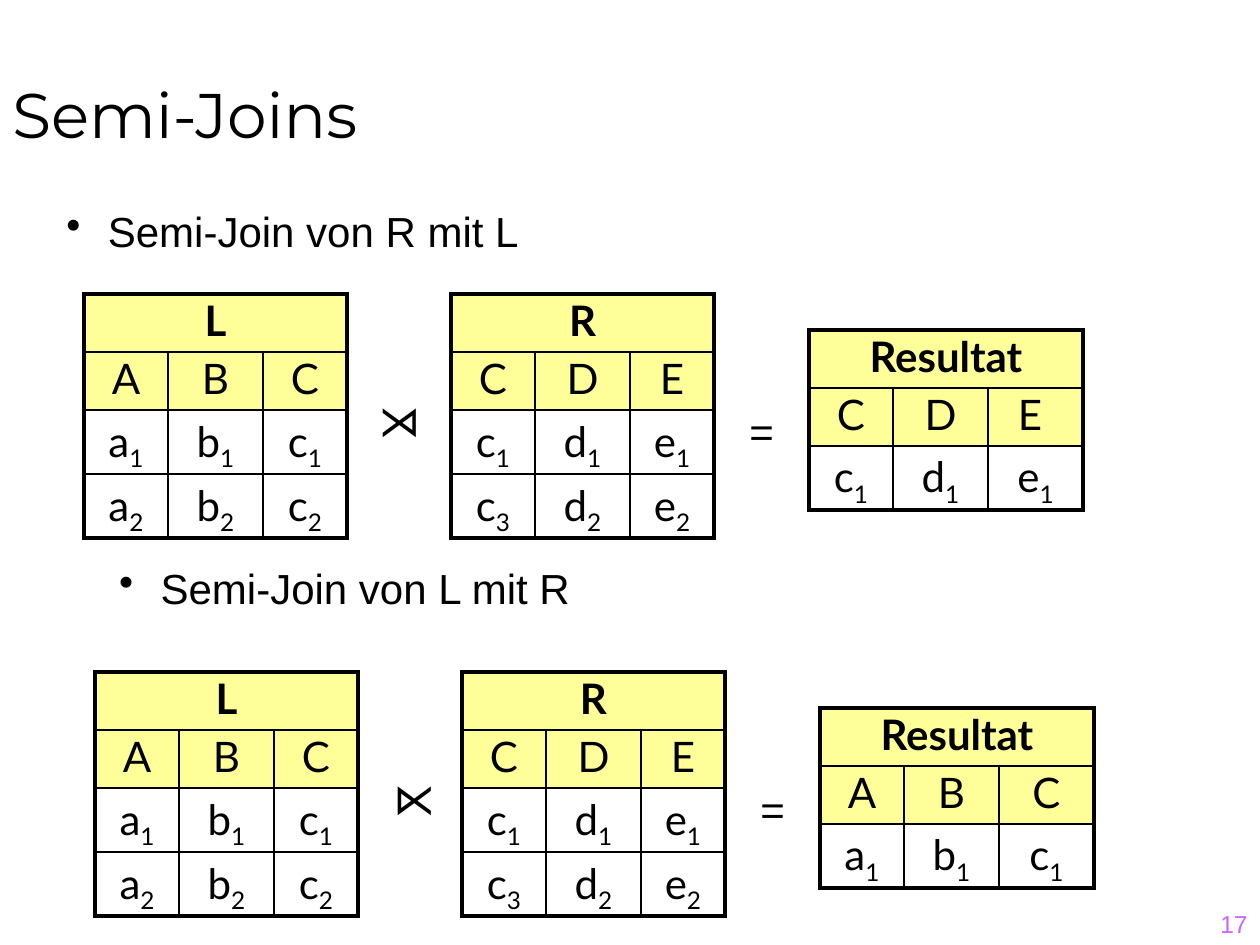
import lxml.etree
import pptx
import pptx.dml.color
import pptx.enum.text
import pptx.oxml
import pptx.oxml.ns
import pptx.util

EMU_PER_PX = 914400 / 126
COLORS = {"ink": "000000", "header": "FFFF99", "body": "FFFFFF", "page": "CC66FF"}
ALIGN = pptx.enum.text.PP_ALIGN
ANCHOR = pptx.enum.text.MSO_ANCHOR
qn = pptx.oxml.ns.qn


def px(length):
    return pptx.util.Emu(round(length * EMU_PER_PX))


def write(frame, text, font="Arial", size=24, color="ink", bold=False,
          align=ALIGN.CENTER, anchor=ANCHOR.TOP, line=None, before=50, bullet=None):
    """Fill a text frame; what follows an underscore is set as a subscript."""
    frame.word_wrap = True
    frame.vertical_anchor = anchor
    paragraph = frame.paragraphs[0]
    paragraph.alignment = align
    if line:
        paragraph.line_spacing = line
    properties = paragraph._p.get_or_add_pPr()
    spacing = lxml.etree.SubElement(properties, qn("a:spcBef"))
    lxml.etree.SubElement(spacing, qn("a:spcPct"), val=str(before * 1000))
    if bullet:
        lxml.etree.SubElement(properties, qn("a:buChar"), char=bullet)
    for level, part in enumerate(text.split("_")):
        run = paragraph.add_run()
        run.text = part
        run.font.name = font
        run.font.size = pptx.util.Pt(size)
        run.font.bold = bold
        run.font.color.rgb = pptx.dml.color.RGBColor.from_string(COLORS[color])
        if level:
            run.font._element.set("baseline", "-25000")


presentation = pptx.Presentation()
presentation.slide_width = px(1260)
presentation.slide_height = px(945)
slide = presentation.slides.add_slide(presentation.slide_layouts[6])

# Title, page number, headings and operators
labels = [
    ("Semi-Joins", 0, 0, 1260, 157,
     dict(font="Montserrat", size=36, align=ALIGN.LEFT, anchor=ANCHOR.BOTTOM, before=0)),
    ("17", 998, 882, 262, 63,
     dict(size=14, color="page", align=ALIGN.RIGHT, anchor=ANCHOR.BOTTOM)),
    (" Semi-Join von R mit L", 32, 199, 536, 63, dict(bullet="•")),
    (" Semi-Join von L mit R", 84, 556, 536, 63, dict(bullet="•")),
    ("⋊", 363, 388, 73, 63, dict(font="Roboto")),
    ("⋉", 378, 766, 73, 63, dict(font="Roboto")),
    ("=", 714, 399, 95, 63, {}),
    ("=", 725, 777, 95, 63, {}),
]
for text, left, top, width, height, style in labels:
    box = slide.shapes.add_textbox(px(left), px(top), px(width), px(height))
    write(box.text_frame, text, **style)

# Relations: the second example repeats the first, shifted, with another result
left_rows = ["ABC", ["a_1", "b_1", "c_1"], ["a_2", "b_2", "c_2"]]
right_rows = ["CDE", ["c_1", "d_1", "e_1"], ["c_3", "d_2", "e_2"]]
results = [
    (0, 0, [["C", "D", "E "], right_rows[1]]),
    (11, 378, left_rows[:2]),
]
relations = []
for shift_x, shift_y, result_rows in results:
    relations += [
        ("L", 84 + shift_x, 294 + shift_y, [84, 95, 84], left_rows),
        ("R", 451 + shift_x, 294 + shift_y, [84, 95, 84], right_rows),
        ("Resultat", 809 + shift_x, 330 + shift_y, [84, 95, 95], result_rows),
    ]

for name, left, top, widths, rows in relations:
    heights = [58, 58, 64, 64][:len(rows) + 1]
    table = slide.shapes.add_table(
        len(heights), len(widths), px(left), px(top), px(sum(widths)), px(sum(heights))).table
    table.first_row = table.horz_banding = False
    for column, width in zip(table.columns, widths):
        column.width = px(width)
    for row, height in zip(table.rows, heights):
        row.height = px(height)
    table.cell(0, 0).merge(table.cell(0, len(widths) - 1))

    for r, texts in enumerate([[name, "", ""], *rows]):
        for c, text in enumerate(texts):
            cell = table.cell(r, c)
            cell.margin_left = cell.margin_right = 0
            cell.margin_top = cell.margin_bottom = px(6)
            cell.fill.solid()
            fill = COLORS["header" if r < 2 else "body"]
            cell.fill.fore_color.rgb = pptx.dml.color.RGBColor.from_string(fill)
            if text:
                write(cell.text_frame, text, font="Lato", bold=r == 0, line=0.9, before=20)
            outer_sides = {
                "lnL": c == 0,
                "lnR": r == 0 or c == len(widths) - 1,
                "lnT": r == 0,
                "lnB": r == len(heights) - 1,
            }
            for position, (side, outer) in enumerate(outer_sides.items()):
                border = pptx.oxml.parse_xml(
                    f'<a:{side} {pptx.oxml.ns.nsdecls("a")} w="{28575 if outer else 12700}">'
                    f'<a:solidFill><a:srgbClr val="{COLORS["ink"]}"/></a:solidFill></a:{side}>')
                cell._tc.get_or_add_tcPr().insert(position, border)

presentation.save("out.pptx")
